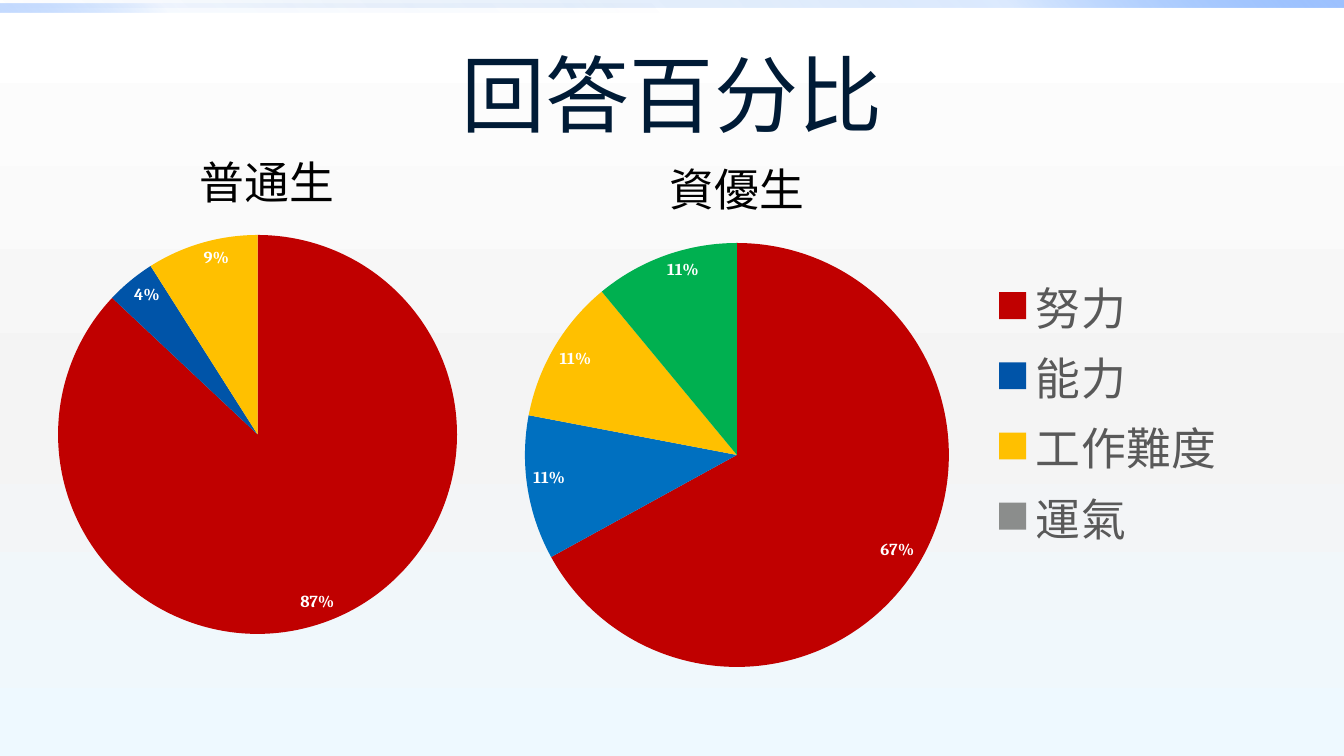
from pptx import Presentation
from pptx.chart.data import CategoryChartData
from pptx.dml.color import RGBColor
from pptx.enum.chart import XL_CHART_TYPE, XL_LABEL_POSITION, XL_LEGEND_POSITION
from pptx.enum.shapes import MSO_SHAPE
from pptx.enum.text import MSO_ANCHOR, MSO_AUTO_SIZE, PP_ALIGN
from pptx.oxml import parse_xml
from pptx.oxml.ns import nsdecls, qn
from pptx.util import Pt
from lxml.etree import SubElement

PX = 914400 / 100.8
COLORS = {
    "title": "001B36", "text": "000000", "legend": "595959", "label": "FFFFFF",
    "red": "C00000", "navy": "0054A8", "yellow": "FFC000", "gray": "8B8D8C",
    "blue": "0070C0", "green": "00B050",
    "bar_start": "0058B7", "bar_middle": "4F95FF", "bar_end": "9EC2FF",
    "sky_top": "FFFFFF", "sky_middle": "F4F4F4", "sky_bottom": "EEF9FF",
}
SANS = "Noto Sans CJK SC"
SERIF = "Cambria"


def px(*lengths):
    return [round(length * PX) for length in lengths]


def color(name):
    return RGBColor.from_string(COLORS[name])


def set_gradient(solid, stops, angle):
    marks = "".join(
        f'<a:gs pos="{place * 1000}"><a:srgbClr val="{COLORS[name]}">'
        f'<a:alpha val="{opacity * 1000}"/></a:srgbClr></a:gs>'
        for place, name, opacity in stops)
    gradient = parse_xml(
        f'<a:gradFill {nsdecls("a")} rotWithShape="1"><a:gsLst>{marks}</a:gsLst>'
        f'<a:lin ang="{angle * 60000}" scaled="0"/></a:gradFill>')
    solid.getparent().replace(solid, gradient)


def add_background(page):
    page.background.fill.solid()
    set_gradient(page.element.xpath(".//p:bgPr/a:solidFill")[0],
                 [(0, "sky_top", 100), (55, "sky_middle", 100), (100, "sky_bottom", 100)], 90)


def add_bar(page, box, opacities, angle):
    bar = page.shapes.add_shape(MSO_SHAPE.RECTANGLE, *px(*box))
    bar.shadow.inherit = False
    bar.line.fill.background()
    bar.fill.solid()
    names = ("bar_start", "bar_middle", "bar_end")
    set_gradient(bar.element.xpath("./p:spPr/a:solidFill")[0],
                 list(zip((0, 75, 100), names, opacities)), angle)


def write_text(frame, text, size, fill, align=PP_ALIGN.LEFT, anchor=MSO_ANCHOR.TOP):
    frame.word_wrap = True
    frame.vertical_anchor = anchor
    para = frame.paragraphs[0]
    para.alignment = align
    span = para.add_run()
    span.text = text
    span.font.size = Pt(size)
    span.font.name = SANS
    span.font.color.rgb = color(fill)
    SubElement(span.font._element, qn("a:ea")).set("typeface", SANS)


def add_title(page, box, text):
    title = page.shapes.title
    title.left, title.top, title.width, title.height = px(*box)
    write_text(title.text_frame, text, size=60, fill="title",
               align=PP_ALIGN.CENTER, anchor=MSO_ANCHOR.MIDDLE)


def add_heading(page, box, text):
    frame = page.shapes.add_textbox(*px(*box)).text_frame
    write_text(frame, text, size=32, fill="text")
    frame.auto_size = MSO_AUTO_SIZE.SHAPE_TO_FIT_TEXT


def chart_layout(outer, inner, target=""):
    left, top, width, height = outer
    x, y, w, h = inner
    parts = {"x": (x - left) / width, "y": (y - top) / height, "w": w / width, "h": h / height}
    values = "".join(f'<c:{key} val="{value:.4f}"/>' for key, value in parts.items())
    return parse_xml(
        f'<c:layout {nsdecls("c")}><c:manualLayout>{target}<c:xMode val="edge"/>'
        f'<c:yMode val="edge"/>{values}</c:manualLayout></c:layout>')


def add_pie(page, box, pie_box, categories, values, fills, legend_box=None):
    data = CategoryChartData()
    data.categories = categories
    data.add_series("Series 1", values)
    chart = page.shapes.add_chart(XL_CHART_TYPE.PIE, *px(*box), data).chart
    chart.has_title = False
    chart.font.size = Pt(10)
    chart.font.name = SERIF
    chart.font.color.rgb = color("text")
    chart.plots[0].vary_by_categories = True
    series = chart.plots[0].series[0]
    for index, name in enumerate(fills):
        slice_format = series.points[index].format
        slice_format.fill.solid()
        slice_format.fill.fore_color.rgb = color(name)
        slice_format.line.fill.background()

    labels = series.data_labels
    labels.show_percentage = True
    labels.show_value = False
    labels.position = XL_LABEL_POSITION.INSIDE_END
    labels.font.size = Pt(12)
    labels.font.bold = True
    labels.font.name = SERIF
    labels.font.color.rgb = color("label")
    label_list = chart.element.xpath(".//c:ser/c:dLbls")[0]
    for index, value in enumerate(values):
        if value == 0:
            label_list.insert(0, parse_xml(
                f'<c:dLbl {nsdecls("c")}><c:idx val="{index}"/><c:delete val="1"/></c:dLbl>'))

    chart.has_legend = legend_box is not None
    if legend_box:
        chart.legend.position = XL_LEGEND_POSITION.RIGHT
        chart.legend.include_in_layout = False
        chart.legend.font.size = Pt(32)
        chart.legend.font.name = SERIF
        chart.legend.font.color.rgb = color("legend")
    for layout in chart.element.xpath(".//c:plotArea/c:layout | .//c:legend/c:layout"):
        layout.getparent().remove(layout)
    chart.element.xpath(".//c:plotArea")[0].insert(
        0, chart_layout(box, pie_box, '<c:layoutTarget val="inner"/>'))
    if legend_box:
        chart.element.xpath(".//c:legendPos")[0].addnext(chart_layout(box, legend_box))


def main():
    deck = Presentation()
    deck.slide_width, deck.slide_height = px(1344, 756)
    page = deck.slides.add_slide(deck.slide_layouts[5])
    add_background(page)
    add_bar(page, (0, 0, 1344, 8), (0, 20, 100), 315)
    add_bar(page, (0, 4, 672, 8), (0, 5, 60), 135)
    add_title(page, (67, 30, 1210, 126), "回答百分比")
    add_pie(page, (40, 169, 1210, 499), (58, 235, 399, 399),
            ("努力", "能力", "工作難度", "運氣"), (87, 4, 9, 0),
            ("red", "navy", "yellow", "gray"), legend_box=(988, 268, 240, 286))
    add_pie(page, (414, 230, 646, 452), (525, 243, 424, 424),
            ("1", "2", "3", "4"), (67, 11, 11, 11),
            ("red", "blue", "yellow", "green"))
    add_heading(page, (190, 150, 231, 65), "普通生")
    add_heading(page, (660, 157, 276, 65), "資優生")
    deck.save("out.pptx")


if __name__ == "__main__":
    main()
